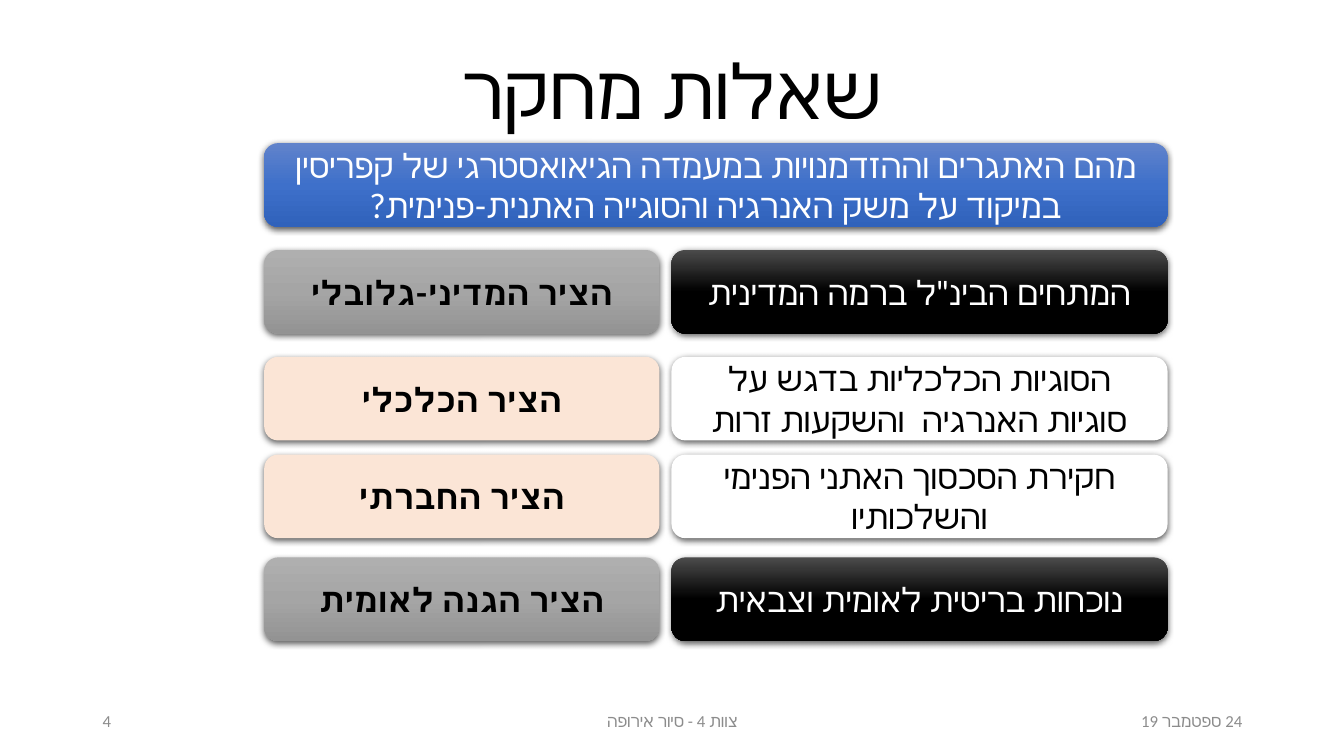
from copy import deepcopy

from lxml import etree
from pptx import Presentation
from pptx import util as u
from pptx.dml.color import RGBColor
from pptx.enum import shapes, text
from pptx.oxml.ns import qn

COLORS = {
    "black": "000000",
    "white": "FFFFFF",
    "peach": "FBE5D6",
    "footer": "8C8C8C",
}
GRADIENTS = {
    "blue": ("6183CB", "3E70CA", "3062BB"),
    "dark": ("4B4B4B", "000000", "000000"),
    "gray": ("AFAFAF", "A5A5A5", "939393"),
}
AXES = [
    (2.48, "dark", "gray", "white", 'המתחים הבינ"ל ברמה המדינית', "הציר המדיני-גלובלי"),
    (3.54, "white", "peach", "black", "הסוגיות הכלכליות בדגש על סוגיות האנרגיה  והשקעות זרות", "הציר הכלכלי"),
    (4.51, "white", "peach", "black", "חקירת הסכסוך האתני הפנימי והשלכותיו", "הציר החברתי"),
    (5.53, "dark", "gray", "white", "נוכחות בריטית לאומית וצבאית", "הציר הגנה לאומית"),
]
LEFT, WIDTH, ROW_HEIGHT = 2.62, 8.96, 0.83
QUESTION_WIDTH, AXIS_WIDTH = 4.92, 3.92
ALIGN = text.PP_ALIGN


def write_text(shape, words, font_name, size, color, align=ALIGN.CENTER,
               anchor=text.MSO_ANCHOR.MIDDLE, bold=False):
    frame = shape.text_frame
    frame.word_wrap = True
    frame.vertical_anchor = anchor
    paragraph = frame.paragraphs[0]
    paragraph.text = words
    paragraph.alignment = align
    properties = paragraph._p.get_or_add_pPr()
    properties.set("rtl", "1")
    font = paragraph.font
    font.size = u.Pt(size)
    font.bold = bold
    font.color.rgb = RGBColor.from_string(COLORS[color])
    font.name = font_name
    complex_font = etree.SubElement(properties.find(qn("a:defRPr")), qn("a:cs"))
    complex_font.set("typeface", font_name)
    return paragraph


def add_text(slide, box, *args, **options):
    shape = slide.shapes.add_textbox(*map(u.Inches, box))
    return write_text(shape, *args, **options)


def paint(shape, fill_name):
    fill = shape.fill
    if fill_name in COLORS:
        fill.solid()
        fill.fore_color.rgb = RGBColor.from_string(COLORS[fill_name])
        return
    fill.gradient()
    fill.gradient_angle = 270
    stop_list = shape._element.spPr.find(".//" + qn("a:gsLst"))
    stop_list.append(deepcopy(stop_list[0]))
    for index, color in enumerate(GRADIENTS[fill_name]):
        stop = fill.gradient_stops[index]
        stop.position = index / 2
        stop.color.rgb = RGBColor.from_string(color)


def add_shadow(shape):
    shape.shadow.inherit = False
    effects = shape._element.spPr.find(qn("a:effectLst"))
    shadow = etree.SubElement(
        effects, qn("a:outerShdw"), blurRad=str(u.Pt(4.5)), dist=str(u.Pt(1.5)),
        dir="5400000", algn="ctr", rotWithShape="0")
    color = etree.SubElement(shadow, qn("a:srgbClr"), val=COLORS["black"])
    etree.SubElement(color, qn("a:alpha"), val="63000")


def add_card(slide, box, words, fill_name, color, bold=False):
    shape = slide.shapes.add_shape(
        shapes.MSO_SHAPE.ROUNDED_RECTANGLE, *map(u.Inches, box))
    paint(shape, fill_name)
    shape.line.fill.background()
    add_shadow(shape)
    write_text(shape, words, "Lato", 24, color, bold=bold)


def add_title(slide, box):
    paragraph = add_text(slide, box, "שאלות מחקר", "Roboto", 54, "black",
                         anchor=text.MSO_ANCHOR.BOTTOM)
    paragraph.line_spacing = 0.9


def add_axis_row(slide, box, question_fill, axis_fill, color, question, axis):
    left, top, width, height = box
    question_left = left + width - QUESTION_WIDTH
    add_card(slide, (question_left, top, QUESTION_WIDTH, height),
             question, question_fill, color)
    add_card(slide, (left, top, AXIS_WIDTH, height),
             axis, axis_fill, "black", bold=True)


def add_footer(slide, box):
    left, top, width, height = box
    side, middle = 3, 4.5
    parts = [
        (left + width - side, side, "24 ספטמבר 19", ALIGN.RIGHT),
        (left + (width - middle) / 2, middle, "צוות 4 - סיור אירופה", ALIGN.CENTER),
        (left, side, "4", ALIGN.LEFT),
    ]
    for part_left, part_width, words, align in parts:
        add_text(slide, (part_left, top, part_width, height), words,
                 "Calibri", 12, "footer", align=align)


def main():
    presentation = Presentation()
    presentation.slide_width = u.Inches(13.33)
    presentation.slide_height = u.Inches(7.5)
    slide = presentation.slides.add_slide(presentation.slide_layouts[6])
    add_title(slide, (0.92, 0.4, 11.5, 1))
    add_card(slide, (LEFT, 1.42, WIDTH, ROW_HEIGHT),
             "מהם האתגרים וההזדמנויות במעמדה הגיאואסטרגי של קפריסין "
             "במיקוד על משק האנרגיה והסוגייה האתנית-פנימית?", "blue", "white")
    for top, *content in AXES:
        add_axis_row(slide, (LEFT, top, WIDTH, ROW_HEIGHT), *content)
    add_footer(slide, (0.92, 6.95, 11.5, 0.4))
    presentation.save("out.pptx")


if __name__ == "__main__":
    main()
